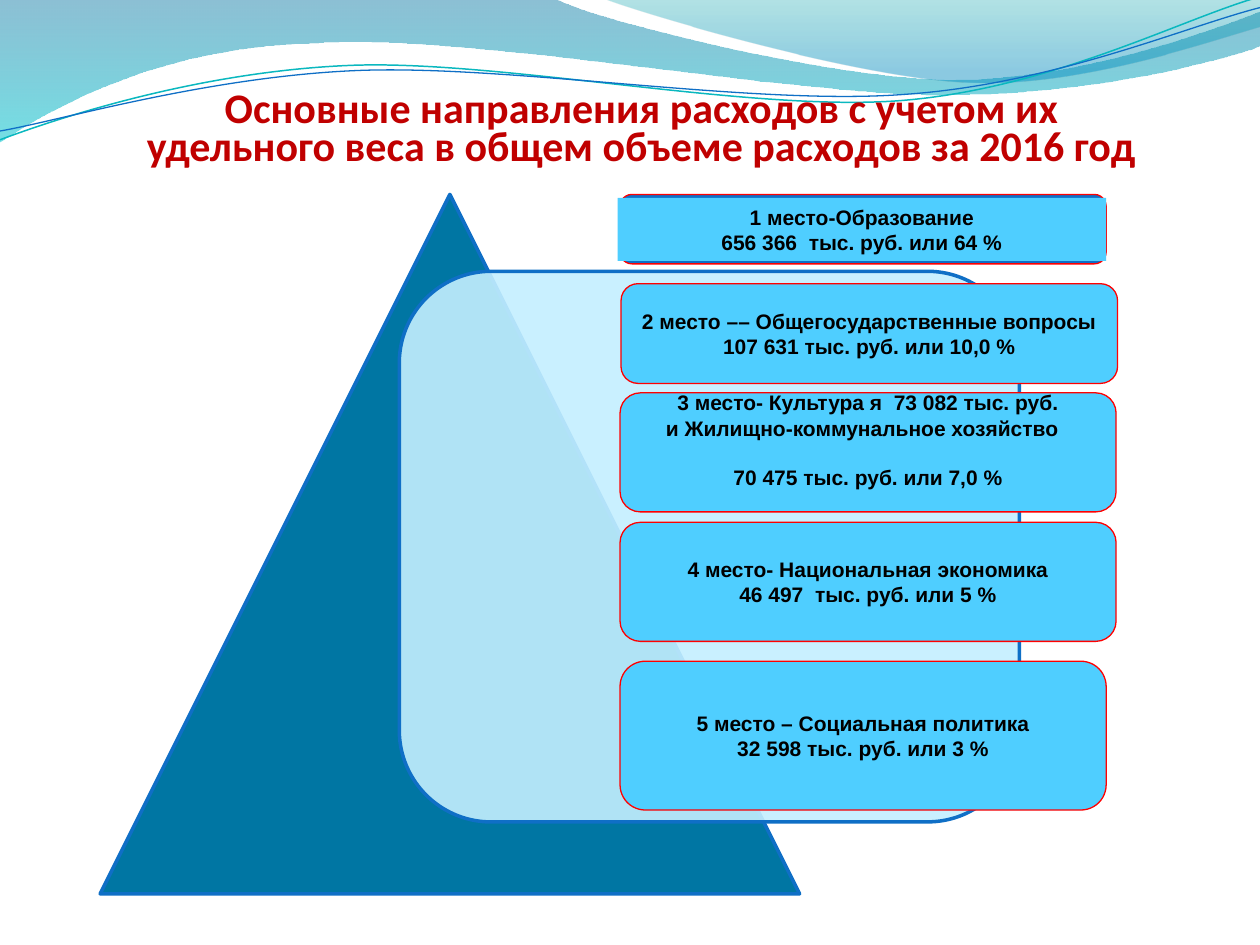
from math import cos, radians, sin

from lxml.etree import SubElement
from pptx import Presentation
from pptx.dml.color import RGBColor
from pptx.enum.shapes import MSO_SHAPE as Shape
from pptx.enum.text import MSO_ANCHOR as Anchor, PP_ALIGN as Align
from pptx.oxml.ns import qn
from pptx.util import Cm, Pt

COLORS = {
    "title": "C00000", "text": "000000", "blue": "0F6FC6", "teal": "0AB8BF",
    "pyramid": "0076A3", "panel": "C4EFFF", "card": "4FCEFF", "border": "FF0000",
    "wave_blue": "0074A1", "wave_cyan": "00C6CF",
    "wave_green": "00A1A9", "wave_sky": "008BBF",
}
TITLE_FONT = {"name": "Calibri", "size": Pt(24), "bold": True}
CARD_FONT = {"name": "Arial", "size": Pt(12), "bold": True}
GRID = 2.54  # waves are given on a 10 x 7.5 grid, this many cm a unit
TILT = 357.3

# Outline steps: two numbers make a straight line, six make a Bezier curve.
BANDS = [
    ((-0.01, -0.01, 10.02, 1.14),
     [(0, 0), (4.4, -0.01), (4.76, 0.17, 6.64, 0.63, 7.58, 0.63),
      (8.53, 0.63, 9.58, 0.26, 10, 0.09), (10.01, 0.36),
      (9.83, 0.44, 8.7, 0.76, 7.46, 0.75), (6.22, 0.75, 3.82, 0.28, 2.57, 0.34),
      (1.29, 0.36, 0.46, 0.83, -0.01, 1.13), (0, 0)],
     [(0, "wave_blue", 45), (1, "wave_cyan", 55)]),
    ((4.79, -0.01, 5.21, 0.7),
     [(4.79, -0.01), (5.09, 0.11, 6.82, 0.62, 7.69, 0.65),
      (8.56, 0.69, 9.61, 0.32, 10, 0.21), (10, 0), (4.79, -0.01)],
     [(0, "wave_green", 30), (0.8, "wave_sky", 45)]),
]
RIBBONS = [
    ((-0.02, 0.22, 10.02, 0.71),
     [(0, 1.11), (0.48, 0.93, 1.58, 0.57, 2.77, 0.52),
      (3.95, 0.47, 5.93, 0.89, 7.13, 0.8), (8.33, 0.71, 9.38, 0.15, 9.98, -0.02)],
     "teal", 0.85),
    ((-0.02, 0.3, 10.03, 0.58),
     [(0, 1.04), (0.47, 0.96, 1.64, 0.61, 2.83, 0.56),
      (4.03, 0.51, 5.97, 0.84, 7.17, 0.75), (8.36, 0.67, 9.41, 0.21, 10, 0.06)],
     "blue", 0.75),
]

TITLE = "Основные направления расходов с учетом их удельного веса в общем объеме расходов за 2016 год"
FIRST_PLACE = ["1 место-Образование", "656 366  тыс. руб. или 64 %"]
CARDS = [
    ((12.52, 5.72, 10.01, 2.01),
     ["2 место –– Общегосударственные вопросы", "107 631 тыс. руб. или 10,0 %"]),
    ((12.5, 7.92, 10, 2.4),
     ["3 место- Культура я  73 082 тыс. руб.", "и Жилищно-коммунальное хозяйство  ",
      "70 475 тыс. руб. или 7,0 %"]),
    ((12.5, 10.53, 10, 2.4),
     ["4 место- Национальная экономика", "46 497  тыс. руб. или 5 %"]),
    ((12.5, 13.33, 9.8, 3),
     ["5 место – Социальная политика", "32 598 тыс. руб. или 3 %"]),
]


def rgb(name):
    return RGBColor.from_string(COLORS[name])


def set_alpha(color_element, percent):
    SubElement(color_element, qn("a:alpha")).set("val", str(percent * 1000))


def set_line(shape, color=None, width=0.75):
    if color is None:
        shape.line.fill.background()
    else:
        shape.line.color.rgb = rgb(color)
        shape.line.width = Pt(width)


def set_place(shape, place):
    shape.left, shape.top, shape.width, shape.height = map(Cm, place)


def format_font(font, values, color):
    for key, value in values.items():
        setattr(font, key, value)
    font.color.rgb = rgb(color)


def add_wave(page, place, steps, rotation=0):
    """Draw an outline whose six-number steps become true Bezier curves."""
    left, top, width, height = place
    cx, cy = left + width / 2, top + height / 2
    c, s = cos(radians(-rotation)), sin(radians(-rotation))

    def local(x, y):
        dx, dy = x - cx, y - cy
        return (Cm((dx * c - dy * s + width / 2) * GRID),
                Cm((dx * s + dy * c + height / 2) * GRID))

    anchors = [local(*step[-2:]) for step in steps]
    builder = page.shapes.build_freeform(*anchors[0])
    builder.add_line_segments(anchors[1:], close=steps[0] == steps[-1])
    wave = builder.convert_to_shape()
    wave.shadow.inherit = False
    set_place(wave, [value * GRID for value in place])
    wave.rotation = rotation

    outline = next(wave.element.spPr.iter(qn("a:path")))
    outline.set("w", str(wave.width))
    outline.set("h", str(wave.height))
    for command, step in zip(list(outline), steps):
        for old in list(command):
            command.remove(old)
        if len(step) == 6:
            curve = SubElement(outline, qn("a:cubicBezTo"))
            outline.replace(command, curve)
            command = curve
        for i in range(0, len(step), 2):
            x, y = local(step[i], step[i + 1])
            point = SubElement(command, qn("a:pt"))
            point.set("x", str(int(x)))
            point.set("y", str(int(y)))
    return wave


def add_band(page, place, steps, stops):
    band = add_wave(page, place, steps)
    band.fill.gradient()
    band.fill.gradient_angle = 270
    for stop, (position, color, _) in zip(band.fill.gradient_stops, stops):
        stop.position = position
        stop.color.rgb = rgb(color)
    for element, (_, _, alpha) in zip(band.element.spPr.iter(qn("a:srgbClr")), stops):
        set_alpha(element, alpha)
    set_line(band)


def add_ribbon(page, place, steps, color, width):
    ribbon = add_wave(page, place, steps, TILT)
    ribbon.fill.background()
    set_line(ribbon, color, width)


def add_title(page):
    title = page.shapes.title
    title.element.getparent().append(title.element)  # in front of the waves
    set_place(title, (2.49, 1.73, 20.88, 2.9))
    frame = title.text_frame
    frame.text = TITLE
    frame.word_wrap = True
    frame.vertical_anchor = Anchor.BOTTOM
    frame.margin_bottom = Cm(1.22)
    para = frame.paragraphs[0]
    para.alignment = Align.CENTER
    para.line_spacing = 0.75
    format_font(para.runs[0].font, TITLE_FONT, "title")


def add_block(page, kind, place, fill, line=None, width=0.75, corner=None, alpha=None):
    block = page.shapes.add_shape(kind, *map(Cm, place))
    block.shadow.inherit = False
    block.fill.solid()
    block.fill.fore_color.rgb = rgb(fill)
    if alpha is not None:
        set_alpha(next(block.element.spPr.iter(qn("a:srgbClr"))), alpha)
    set_line(block, line, width)
    if corner is not None:
        block.adjustments[0] = corner
    return block


def write_lines(block, lines, anchor, wrap):
    frame = block.text_frame
    frame.word_wrap = wrap
    frame.vertical_anchor = anchor
    for number, text in enumerate(lines):
        para = frame.paragraphs[0] if number == 0 else frame.add_paragraph()
        para.alignment = Align.CENTER
        span = para.add_run()
        span.text = text
        format_font(span.font, CARD_FONT, "text")
    if len(lines) == 3:  # the second amount stands apart, the text sits high
        frame.paragraphs[1].space_after = Pt(14)
        frame.margin_top, frame.margin_bottom = Cm(0), Cm(0.5)


def main():
    deck = Presentation()
    deck.slide_width, deck.slide_height = Cm(25.4), Cm(19.05)
    page = deck.slides.add_slide(deck.slide_layouts[5])

    for band in BANDS:
        add_band(page, *band)
    for ribbon in RIBBONS:
        add_ribbon(page, *ribbon)
    add_title(page)

    add_block(page, Shape.ISOSCELES_TRIANGLE, (2.02, 3.92, 14.1, 14.1), "pyramid", "blue", 2)
    add_block(page, Shape.ROUNDED_RECTANGLE, (8.05, 5.47, 12.5, 11.1), "panel", "blue", 2,
              alpha=90)
    add_block(page, Shape.ROUNDED_RECTANGLE, (12.5, 3.92, 9.8, 1.4), "blue", "border",
              corner=0.17)
    for place, lines in CARDS:
        card = add_block(page, Shape.ROUNDED_RECTANGLE, place, "card", "border", corner=0.17)
        write_lines(card, lines, Anchor.MIDDLE, False)
    label = add_block(page, Shape.RECTANGLE, (12.45, 3.99, 9.85, 1.27), "card")
    write_lines(label, FIRST_PLACE, Anchor.TOP, True)

    deck.save("out.pptx")


if __name__ == "__main__":
    main()
